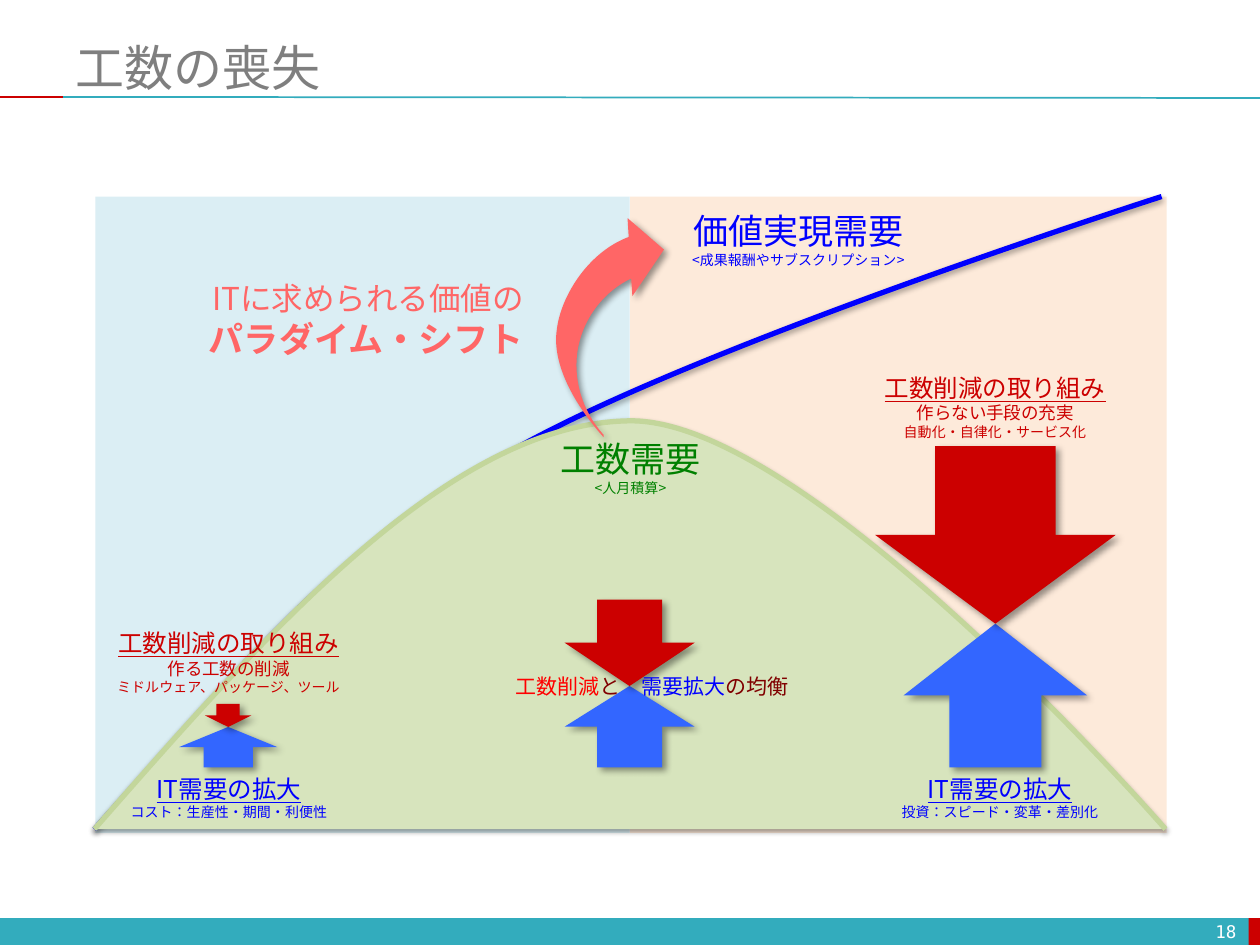
"""Build the slide on the loss of man-hour demand."""
from lxml import etree
from pptx import Presentation
from pptx.dml.color import RGBColor
from pptx.enum import lang, shapes, text
from pptx.oxml import ns
from pptx.util import Pt

THEME = {
    "font": "Noto Sans CJK JP", "title font": "Calibri", "number font": "DejaVu Sans Mono",
    "display": 28, "heading": 20, "lead": 18, "subject": 14, "balance": 12, "detail": 10, "note": 8,
    "gray": "7F7F7F", "white": "FFFFFF", "teal": "33ACBD", "red": "CC0000", "peach": "FDEADA",
    "sky": "DBEEF4", "blue": "0000FF", "arrow blue": "3366FF", "leaf": "D7E4BD", "leaf edge": "C3D69B",
    "green": "008000", "coral": "FF6666", "bright red": "FF0000", "maroon": "800000",
}
ARROW_SHADOW = {"blur": 4, "distance": 3, "angle": 45, "alpha": 40}
CURVE_SHADOW = {"blur": 3.1, "distance": 1.6, "angle": 90, "alpha": 38}

BANDS = [
    ((0, 524.6, 720, 15.4), "teal"),
    ((713.5, 524.6, 6.5, 15.4), "red"),
    ((360, 112.3, 306.7, 363.6), "peach"),
    ((54.5, 112.3, 305.3, 363.6), "sky"),
]
RULES = [((36, 55.4), (720, 56), "teal"), ((0, 55.4), (36, 55.4), "red")]

VALUE_CURVE = [
    [(54, 473.8)],
    [(156.2, 360), (185.8, 321.1), (287.3, 260.6)],
    [(388.8, 200.2), (663.8, 112.3), (663.8, 112.3)],
]
EFFORT_CURVE = [
    [(54, 473.8)],
    [(156.2, 357.1), (258.5, 241.2), (360.7, 240.5)],
    [(463, 240.5), (666, 473.8), (666, 473.8)],
]
SHIFT_ARROW = [
    [(344.9, 249.8)],
    [(327.6, 230.4), (315.4, 207.4), (318.2, 188.6)],
    [(320.4, 169.2), (336.2, 144), (359.3, 135.4)],
    [(358.6, 124.6)], [(379.4, 142.6)], [(361.4, 169.2)], [(360.7, 159.1)],
    [(345.6, 166.3), (334.1, 180.7), (330.5, 198)],
    [(326.9, 216), (332.6, 234.7), (344.9, 248.4)],
]

ARROW_BASE = 438.5
ARROW_PAIRS = [
    {"center": 568.8, "meeting": 356.4, "red": (137.5, 101.5), "blue width": 105},
    {"center": 130.4, "meeting": 415.4, "red": (26.6, 13.2), "blue width": 56.2},
    {"center": 359.8, "meeting": 392, "red": (74.2, 49.4), "blue width": 74.2},
]

LABELS = [
    ((312.8, 246.7, 95, 41), "center", [
        [("工数需要", "heading", "green")],
        [("<人月積算>", "note", "green")]]),
    ((58.7, 355.4, 144, 46), "center", [
        [("工数削減の取り組み", "subject", "red")],
        [("作る工数の削減", "detail", "red")],
        [("ミドルウェア、パッケージ、ツール", "note", "red")]]),
    ((67.2, 438.8, 127.4, 34), "center", [
        [("IT需要の拡大", "subject", "blue")],
        [("コスト：生産性・期間・利便性", "note", "blue")]]),
    ((507.8, 438.8, 127.4, 34), "center", [
        [("IT需要の拡大", "subject", "blue")],
        [("投資：スピード・変革・差別化", "note", "blue")]]),
    ((497.8, 209.5, 141.8, 46), "center", [
        [("工数削減の取り組み", "subject", "red")],
        [("作らない手段の充実", "detail", "red")],
        [("自動化・自律化・サービス化", "note", "red")]]),
    ((386, 116, 140.4, 41), "center", [
        [("価値実現需要", "heading", "blue")],
        [("<成果報酬やサブスクリプション>", "note", "blue")]]),
    ((109.2, 156.2, 197.3, 53.3), "right", [
        [("ITに求められる価値の", "lead", "coral")],
        [("パラダイム・シフト", "heading", "coral")]]),
    ((284.4, 381.2, 176.4, 21.6), "center", [
        [("工数削減", "balance", "bright red"), ("と　", "balance", "maroon"),
         ("需要拡大", "balance", "blue"), ("の均衡", "balance", "maroon")]]),
]
ALIGN = {"left": text.PP_ALIGN.LEFT, "center": text.PP_ALIGN.CENTER, "right": text.PP_ALIGN.RIGHT}


def color(name):
    return RGBColor.from_string(THEME[name])


def add_child(parent, tag, **attributes):
    return etree.SubElement(parent, ns.qn(tag), {key: str(value) for key, value in attributes.items()})


def finish(shape, fill=None, edge=None, shadow=None):
    shape.shadow.inherit = False
    if fill:
        shape.fill.solid()
        shape.fill.fore_color.rgb = color(fill)
    else:
        shape.fill.background()
    if edge:
        shape.line.color.rgb = color(edge)
        shape.line.width = Pt(3)
    else:
        shape.line.fill.background()
    if shadow:
        effects = shape._element.spPr.find(ns.qn("a:effectLst"))
        outer = add_child(effects, "a:outerShdw", blurRad=Pt(shadow["blur"]), dist=Pt(shadow["distance"]),
                          dir=shadow["angle"] * 60000, algn="tl", rotWithShape=0)
        black = add_child(outer, "a:srgbClr", val="000000")
        add_child(black, "a:alpha", val=shadow["alpha"] * 1000)


def add_preset(page, kind, place, fill, shadow=None):
    shape = page.shapes.add_shape(kind, *map(Pt, place))
    finish(shape, fill, shadow=shadow)


def add_curve(page, segments, close=False, **look):
    points = [(Pt(x), Pt(y)) for segment in segments for x, y in segment]
    builder = page.shapes.build_freeform(*points[0])
    builder.add_line_segments(points[1:], close=close)
    shape = builder.convert_to_shape()
    lines = iter(list(shape._element.iter(ns.qn("a:lnTo"))))
    for segment in segments[1:]:
        bend, *others = [next(lines) for _ in segment]
        if others:
            bend.tag = ns.qn("a:cubicBezTo")
            for line in others:
                bend.append(line[0])
                line.getparent().remove(line)
    finish(shape, **look)


def add_rule(page, start, end, ink):
    rule = page.shapes.add_connector(shapes.MSO_CONNECTOR.STRAIGHT, *map(Pt, start + end))
    rule.line.color.rgb = color(ink)
    rule.line.width = Pt(1)
    add_child(rule._element.spPr, "a:effectLst")


def add_text(page, place, align, paragraphs, font="font", **frame_format):
    frame = page.shapes.add_textbox(*map(Pt, place)).text_frame
    for name, value in frame_format.items():
        setattr(frame, name, value)
    for index, spans in enumerate(paragraphs):
        para = frame.paragraphs[0] if index == 0 else frame.add_paragraph()
        para.alignment = ALIGN[align]
        for words, size, ink in spans:
            span = para.add_run()
            span.text = words
            look = {"name": THEME[font], "size": Pt(THEME[size]), "language_id": lang.MSO_LANGUAGE_ID.JAPANESE,
                    "underline": size == "subject", "bold": (size, ink) == ("heading", "coral")}
            for name, value in look.items():
                setattr(span.font, name, value)
            span.font.color.rgb = color(ink)
            add_child(span.font._element, "a:ea", typeface=THEME["font"])


def main():
    deck = Presentation()
    deck.slide_width, deck.slide_height = Pt(720), Pt(540)
    page = deck.slides.add_slide(deck.slide_layouts[6])
    preset = shapes.MSO_SHAPE
    for place, fill in BANDS:
        add_preset(page, preset.RECTANGLE, place, fill)
    for start, end, ink in RULES:
        add_rule(page, start, end, ink)
    middle = {"vertical_anchor": text.MSO_ANCHOR.MIDDLE, "word_wrap": True}
    add_text(page, (36, 21.6, 684, 33), "left", [[("工数の喪失", "display", "gray")]], "title font", **middle)
    add_text(page, (545.8, 523.4, 167.8, 17.3), "right", [[("18", "detail", "white")]], "number font", **middle)
    add_curve(page, VALUE_CURVE, edge="blue", shadow=CURVE_SHADOW)
    add_curve(page, EFFORT_CURVE, fill="leaf", edge="leaf edge", shadow=CURVE_SHADOW)
    add_curve(page, SHIFT_ARROW, close=True, fill="coral", shadow=ARROW_SHADOW)
    for pair in ARROW_PAIRS:
        center, meeting = pair["center"], pair["meeting"]
        width, height = pair["red"]
        rise = pair["blue width"]
        add_preset(page, preset.UP_ARROW, (center - rise / 2, meeting, rise, ARROW_BASE - meeting),
                   "arrow blue", ARROW_SHADOW)
        add_preset(page, preset.DOWN_ARROW, (center - width / 2, meeting - height, width, height),
                   "red", ARROW_SHADOW)
    for place, align, paragraphs in LABELS:
        add_text(page, place, align, paragraphs, word_wrap=False, auto_size=text.MSO_AUTO_SIZE.SHAPE_TO_FIT_TEXT)
    deck.save("out.pptx")


if __name__ == "__main__":
    main()
